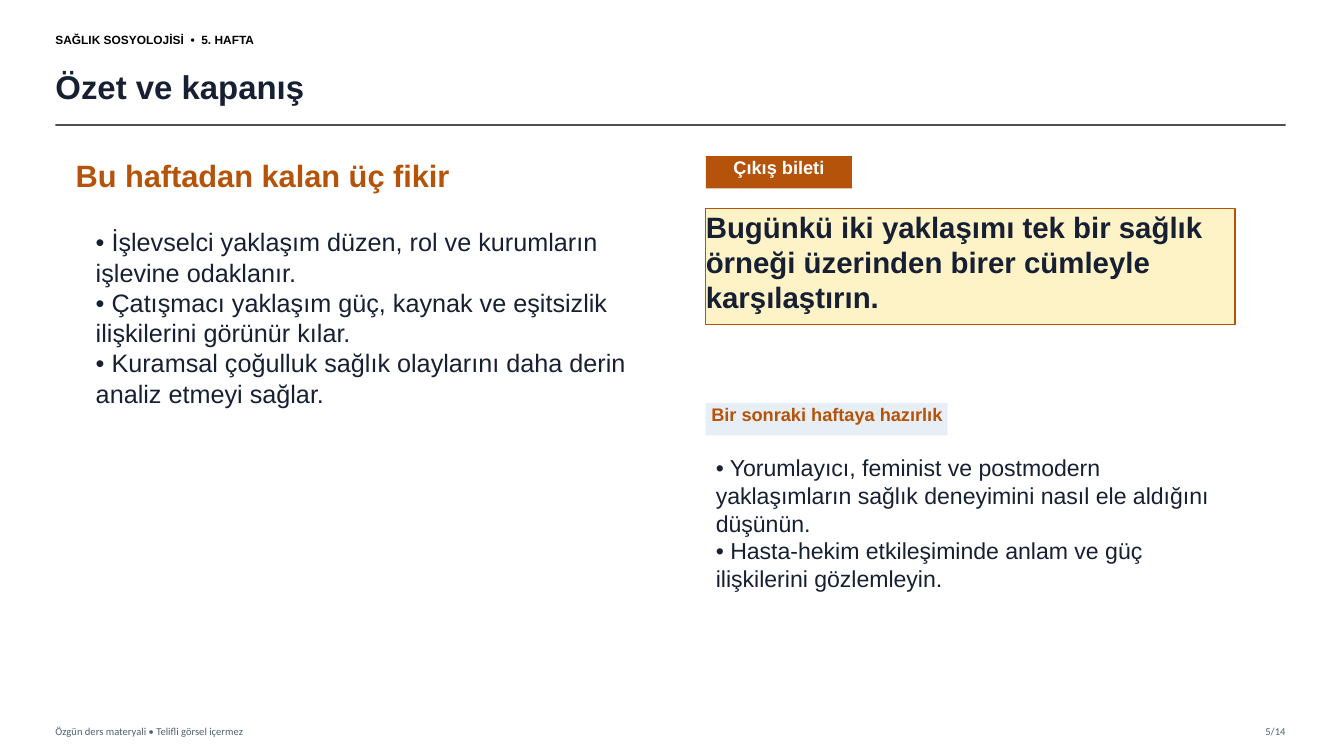
"""Builds the closing summary slide of a health sociology lecture."""
from lxml import etree
from pptx import Presentation
from pptx.dml.color import RGBColor
from pptx.enum.shapes import MSO_CONNECTOR, MSO_SHAPE
from pptx.enum.text import MSO_ANCHOR, PP_ALIGN
from pptx.oxml.ns import qn
from pptx.util import Pt

PX = 9144
LEFT, CENTER, RIGHT = PP_ALIGN.LEFT, PP_ALIGN.CENTER, PP_ALIGN.RIGHT
TOP, MIDDLE = MSO_ANCHOR.TOP, MSO_ANCHOR.MIDDLE
RECTANGLE, STRAIGHT = MSO_SHAPE.RECTANGLE, MSO_CONNECTOR.STRAIGHT
COLORS = {
    "white": "FFFFFF", "black": "000000", "ink": "172033", "rule": "333333",
    "muted": "506070", "accent": "B45309", "cream": "FEF3C7", "mist": "E8EEF5",
}


def color(name):
    return RGBColor.from_string(COLORS[name])


def write(shape, lines, size, color_name, bold=False, align=LEFT, anchor=TOP, font="Arial"):
    frame = shape.text_frame
    frame.word_wrap = True
    frame.vertical_anchor = anchor
    frame.margin_left = frame.margin_top = frame.margin_right = frame.margin_bottom = 0
    frame.text = "\n".join(lines)
    for paragraph in frame.paragraphs:
        paragraph.alignment = align
        for run in paragraph.runs:
            run.font.name = font
            run.font.size = Pt(size)
            run.font.bold = bold
            run.font.color.rgb = color(color_name)


presentation = Presentation()
presentation.slide_width = 1333 * PX
presentation.slide_height = 750 * PX
slide = presentation.slides.add_slide(presentation.slide_layouts[6])
slide.background.fill.solid()
slide.background.fill.fore_color.rgb = color("white")

rule = slide.shapes.add_connector(STRAIGHT, 55 * PX, 124 * PX, 1275 * PX, 124 * PX)
rule.line.width = Pt(1.2)
rule.line.color.rgb = color("rule")
rule_color = rule.line.fill._xPr.find(".//" + qn("a:srgbClr"))
etree.SubElement(rule_color, qn("a:alpha"), val="85000")
etree.SubElement(rule._element.spPr, qn("a:effectLst"))

key_ideas = [
    "• İşlevselci yaklaşım düzen, rol ve kurumların işlevine odaklanır.",
    "• Çatışmacı yaklaşım güç, kaynak ve eşitsizlik ilişkilerini görünür kılar.",
    "• Kuramsal çoğulluk sağlık olaylarını daha derin analiz etmeyi sağlar.",
]
preparation = [
    "• Yorumlayıcı, feminist ve postmodern yaklaşımların sağlık deneyimini nasıl ele aldığını düşünün.",
    "• Hasta-hekim etkileşiminde anlam ve güç ilişkilerini gözlemleyin.",
]
texts = [
    ((55, 25, 360, 28), ["SAĞLIK SOSYOLOJİSİ  •  5. HAFTA"], 8.5, "black", True, LEFT, MIDDLE, "Arial"),
    ((55, 58, 1195, 55), ["Özet ve kapanış"], 23.5, "ink", True, LEFT, MIDDLE, "Arial"),
    ((55, 714, 600, 22), ["Özgün ders materyali • Telifli görsel içermez"],
     7.5, "muted", False, LEFT, MIDDLE, "Calibri"),
    ((1210, 714, 65, 22), ["5/14"], 7.5, "muted", False, RIGHT, MIDDLE, "Calibri"),
    ((75, 155, 540, 45), ["Bu haftadan kalan üç fikir"], 22, "accent", True, LEFT, TOP, "Arial"),
    ((95, 225, 550, 240), key_ideas, 18, "ink", False, LEFT, TOP, "Arial"),
    ((710, 450, 520, 135), preparation, 16.5, "ink", False, LEFT, TOP, "Arial"),
]
for box, lines, *style in texts:
    shape = slide.shapes.add_textbox(*[length * PX for length in box])
    write(shape, lines, *style)

exit_question = "Bugünkü iki yaklaşımı tek bir sağlık örneği üzerinden birer cümleyle karşılaştırın."
panels = [
    ((700, 155, 145, 32), "accent", None, "Çıkış bileti", 13, "white", CENTER),
    ((700, 207, 525, 115), "cream", "accent", exit_question, 21, "ink", LEFT),
    ((700, 400, 240, 32), "mist", None, "Bir sonraki haftaya hazırlık", 13, "accent", CENTER),
]
for box, fill, border, text, size, text_color, align in panels:
    shape = slide.shapes.add_shape(RECTANGLE, *[length * PX for length in box])
    shape.shadow.inherit = False
    shape.fill.solid()
    shape.fill.fore_color.rgb = color(fill)
    if border:
        shape.line.color.rgb = color(border)
        shape.line.width = Pt(1)
    else:
        shape.line.fill.background()
    write(shape, [text], size, text_color, True, align)

presentation.save("out.pptx")
